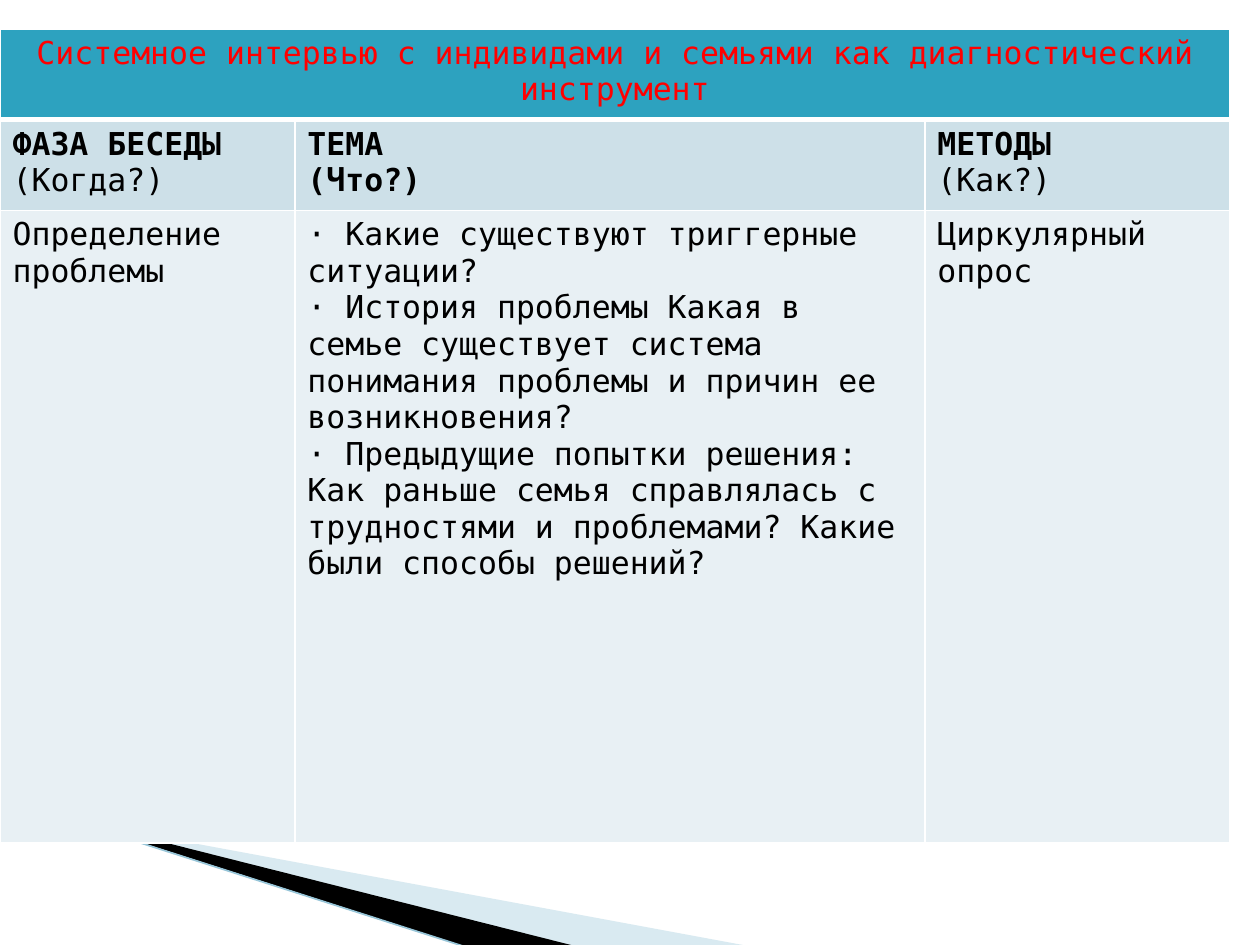
import pptx
import pptx.util
from lxml import etree
from pptx.dml.color import RGBColor
from pptx.enum.shapes import MSO_CONNECTOR
from pptx.enum.text import PP_ALIGN
from pptx.oxml.ns import qn

Inches, Pt = pptx.util.Inches, pptx.util.Pt

THEME = dict(font="DejaVu Sans Mono", size=18, title="FF0000", text="000000",
             fills=["2DA2BF", "CDE0E8", "E8F0F4"], border="FFFFFF",
             wedge="A0CBDC", band="000000", edge="97C5D8")

# A cell is a list of paragraphs; a paragraph is a list of (text, bold) runs.
TITLE = [[("Системное интервью с индивидами и семьями как диагностический инструмент", False)]]
ROWS = [
    [TITLE],
    [[[("ФАЗА БЕСЕДЫ\v", True), ("(Когда?)", False)]],
     [[("ТЕМА", True)], [("(Что?)", True)]],
     [[("МЕТОДЫ\v", True), ("(Как?)", False)]]],
    [[[("Определение проблемы", False)]],
     [[("· Какие существуют триггерные ситуации?\v"
        "· История проблемы Какая в семье существует система понимания "
        "проблемы и причин ее возникновения?\v"
        "· Предыдущие попытки решения: Как раньше семья справлялась с "
        "трудностями и проблемами? Какие были способы решений?", False)]],
     [[("Циркулярный опрос", False)]]],
]
COL_WIDTHS = [2.34, 5, 2.42]
ROW_HEIGHTS = [0.72, 0.72, 5.02]
TABLE_TOP = 0.23

SWOOSHES = [
    ([(0.55, 6.51), (5.95, 7.51), (4.56, 7.51), (0.55, 6.5)], THEME["wedge"], 40),
    ([(0.53, 6.49), (4.57, 7.51), (3.72, 7.52), (0.54, 6.5)], THEME["band"], 100),
]
EDGE = [(-0.01, 6.33), (3.71, 7.52)]


def rgb(value):
    return RGBColor.from_string(value)


def add_swoosh(s, points, color, opacity):
    start, *rest = [(Inches(x), Inches(y)) for x, y in points]
    builder = s.shapes.build_freeform(*start)
    builder.add_line_segments(rest, close=True)
    sp = builder.convert_to_shape()
    sp.shadow.inherit = False
    sp.line.fill.background()
    sp.fill.solid()
    sp.fill.fore_color.rgb = rgb(color)
    if opacity < 100:
        clr = sp.fill._xPr.find(qn("a:solidFill"))[0]
        etree.SubElement(clr, qn("a:alpha"), val=str(opacity * 1000))


def add_edge(s):
    (x1, y1), (x2, y2) = EDGE
    line = s.shapes.add_connector(MSO_CONNECTOR.STRAIGHT, Inches(x1), Inches(y1),
                                  Inches(x2), Inches(y2))
    line.line.color.rgb = rgb(THEME["edge"])
    line.line.width = Pt(0.95)
    etree.SubElement(line._element.spPr, qn("a:effectLst"))


def write(tf, paragraphs, color, align=PP_ALIGN.LEFT):
    for i, runs in enumerate(paragraphs):
        p = tf.add_paragraph() if i else tf.paragraphs[0]
        p.alignment = align
        for text, bold in runs:
            for j, piece in enumerate(text.split("\v")):
                if j:
                    p.add_line_break()
                if not piece:
                    continue
                r = p.add_run()
                r.text = piece
                r.font.name, r.font.size = THEME["font"], Pt(THEME["size"])
                r.font.bold, r.font.color.rgb = bold, rgb(color)
        for br in p._p.findall(qn("a:br")):
            etree.SubElement(br, qn("a:rPr"), sz=str(THEME["size"] * 100))


def set_borders(cell, **widths):
    tcPr = cell._tc.get_or_add_tcPr()
    for side in "LRTB":
        ln = etree.SubElement(tcPr, qn("a:ln" + side), w=str(Pt(widths.get(side, 1))))
        fill = etree.SubElement(ln, qn("a:solidFill"))
        etree.SubElement(fill, qn("a:srgbClr"), val=THEME["border"])


def add_interview_table(s):
    table = s.shapes.add_table(len(ROWS), len(COL_WIDTHS), 0, Inches(TABLE_TOP),
                               Inches(sum(COL_WIDTHS)), Inches(sum(ROW_HEIGHTS))).table
    for column, width in zip(table.columns, COL_WIDTHS):
        column.width = Inches(width)
    for i, (row, height) in enumerate(zip(table.rows, ROW_HEIGHTS)):
        row.height = Inches(height)
        for cell in row.cells:
            set_borders(cell, B=3 if i == 0 else 1, T=3 if i == 1 else 1)
            cell.fill.solid()
            cell.fill.fore_color.rgb = rgb(THEME["fills"][i])
        for cell, paragraphs in zip(row.cells, ROWS[i]):
            if i == 0:
                write(cell.text_frame, paragraphs, THEME["title"], PP_ALIGN.CENTER)
            else:
                write(cell.text_frame, paragraphs, THEME["text"])
    table.cell(0, 0).merge(table.cell(0, len(COL_WIDTHS) - 1))


def main():
    prs = pptx.Presentation()
    prs.slide_width, prs.slide_height = Inches(10), Inches(7.5)
    s = prs.slides.add_slide(prs.slide_layouts[6])
    for swoosh in SWOOSHES:
        add_swoosh(s, *swoosh)
    add_edge(s)
    add_interview_table(s)
    prs.save("out.pptx")


if __name__ == "__main__":
    main()
